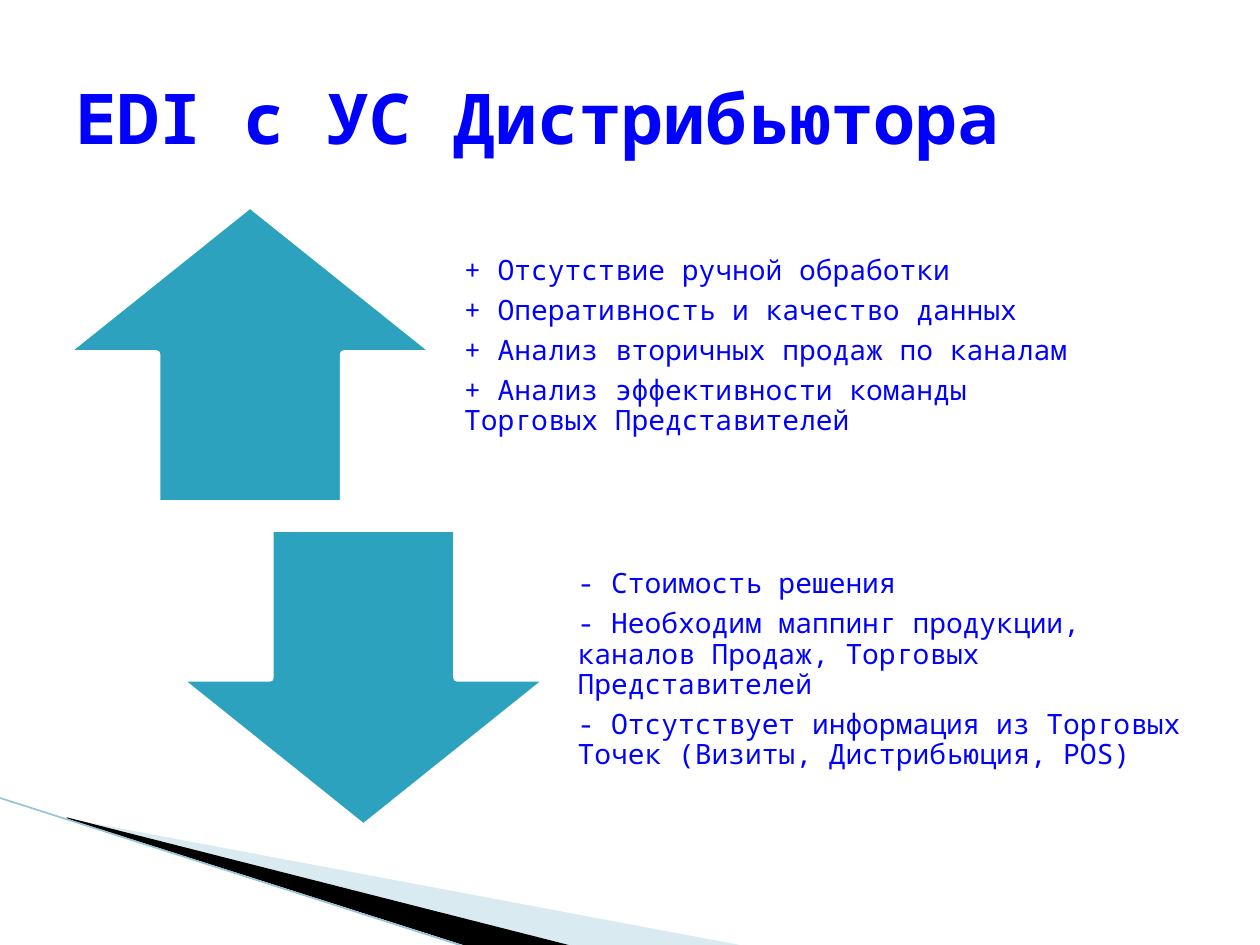
from dataclasses import dataclass

from lxml.etree import SubElement
from pptx import Presentation
from pptx.dml.color import RGBColor
from pptx.enum.shapes import MSO_CONNECTOR, MSO_SHAPE
from pptx.enum.text import MSO_ANCHOR, MSO_AUTO_SIZE, PP_ALIGN
from pptx.oxml.ns import qn
from pptx.util import Pt

BLUE = RGBColor(0x00, 0x00, 0xFF)
TEAL = RGBColor(0x2D, 0xA2, 0xBF)
PALE_BLUE = RGBColor(0xA0, 0xCB, 0xDC)
EDGE_BLUE = RGBColor(0x97, 0xC5, 0xD8)
BLACK = RGBColor(0x00, 0x00, 0x00)
WHITE = RGBColor(0xFF, 0xFF, 0xFF)

FONT = "Noto Sans Mono"
ARROW_WIDTH, BLOCK_HEIGHT = 213.84, 171.36
TEXT_OFFSET, TEXT_WIDTH = 220.32, 362.88


@dataclass
class Wedge:
    points: list[tuple[float, float]]
    color: RGBColor
    opacity: int = 100


@dataclass
class ArgumentBlock:
    arrow: MSO_SHAPE
    left: float
    top: float
    lines: list[str]


WEDGES = [
    Wedge([(39.6, 468.5), (428.4, 540.7), (328.3, 540.7), (39.6, 468)], PALE_BLUE, 40),
    Wedge([(38.2, 467.3), (329, 540.7), (267.8, 541.4), (38.9, 468)], BLACK),
]

BLOCKS = [
    ArgumentBlock(MSO_SHAPE.UP_ARROW, 36, 116.64, [
        "+ Отсутствие ручной обработки",
        "+ Оперативность и качество данных",
        "+ Анализ вторичных продаж по каналам",
        "+ Анализ эффективности команды Торговых Представителей",
    ]),
    ArgumentBlock(MSO_SHAPE.DOWN_ARROW, 100.8, 301.68, [
        "- Стоимость решения",
        "- Необходим маппинг продукции, каналов Продаж, Торговых Представителей",
        "- Отсутствует информация из Торговых Точек (Визиты, Дистрибьюция, POS)",
    ]),
]


def apply_format(target, values: dict) -> None:
    for name, value in values.items():
        setattr(target, name, value)


def set_font(para, size: float, bold: bool = False) -> None:
    apply_format(para.font, {"name": FONT, "size": Pt(size), "bold": bold})
    para.font.color.rgb = BLUE


def draw_wedge(page, wedge: Wedge) -> None:
    builder = page.shapes.build_freeform(*wedge.points[0], scale=Pt(1))
    builder.add_line_segments(wedge.points[1:], close=True)
    shape = builder.convert_to_shape()
    shape.shadow.inherit = False
    shape.fill.solid()
    shape.fill.fore_color.rgb = wedge.color
    shape.line.fill.background()
    if wedge.opacity < 100:
        color = shape.fill._xPr.find(qn("a:solidFill"))[0]
        SubElement(color, qn("a:alpha")).set("val", str(wedge.opacity * 1000))


def draw_edge(page) -> None:
    edge = page.shapes.add_connector(
        MSO_CONNECTOR.STRAIGHT, Pt(-0.72), Pt(455.76), Pt(267.12), Pt(541.44))
    edge.line.color.rgb = EDGE_BLUE
    edge.line.width = Pt(0.95)
    SubElement(edge._element.spPr, qn("a:effectLst"))


def draw_block(page, block: ArgumentBlock) -> None:
    arrow = page.shapes.add_shape(
        block.arrow, Pt(block.left), Pt(block.top), Pt(ARROW_WIDTH), Pt(BLOCK_HEIGHT))
    arrow.shadow.inherit = False
    arrow.fill.solid()
    arrow.fill.fore_color.rgb = TEAL
    arrow.line.color.rgb = WHITE
    arrow.line.width = Pt(4.33)

    box = page.shapes.add_textbox(
        Pt(block.left + TEXT_OFFSET), Pt(block.top), Pt(TEXT_WIDTH), Pt(BLOCK_HEIGHT))
    frame = box.text_frame
    apply_format(frame, {
        "word_wrap": True, "auto_size": MSO_AUTO_SIZE.NONE,
        "vertical_anchor": MSO_ANCHOR.MIDDLE,
        "margin_left": Pt(8.96), "margin_right": Pt(8.96),
        "margin_top": 0, "margin_bottom": Pt(8.96),
    })
    frame.text = "\n".join(block.lines)
    for para in frame.paragraphs:
        apply_format(para, {"line_spacing": 0.9, "space_after": Pt(5.6),
                            "alignment": PP_ALIGN.LEFT})
        set_font(para, 16)


def format_title(page) -> None:
    title = page.shapes.title
    apply_format(title, {"left": Pt(36), "top": Pt(21.6),
                         "width": Pt(648), "height": Pt(90)})
    frame = title.text_frame
    frame.text = "EDI c УС Дистрибьютора"
    apply_format(frame, {"word_wrap": True, "auto_size": MSO_AUTO_SIZE.NONE,
                         "vertical_anchor": MSO_ANCHOR.MIDDLE})
    para = frame.paragraphs[0]
    para.alignment = PP_ALIGN.LEFT
    set_font(para, 40, bold=True)


def main() -> None:
    deck = Presentation()
    deck.slide_width, deck.slide_height = Pt(720), Pt(540)
    page = deck.slides.add_slide(deck.slide_layouts[5])
    for wedge in WEDGES:
        draw_wedge(page, wedge)
    draw_edge(page)
    for block in BLOCKS:
        draw_block(page, block)
    format_title(page)
    deck.save("out.pptx")


if __name__ == "__main__":
    main()
